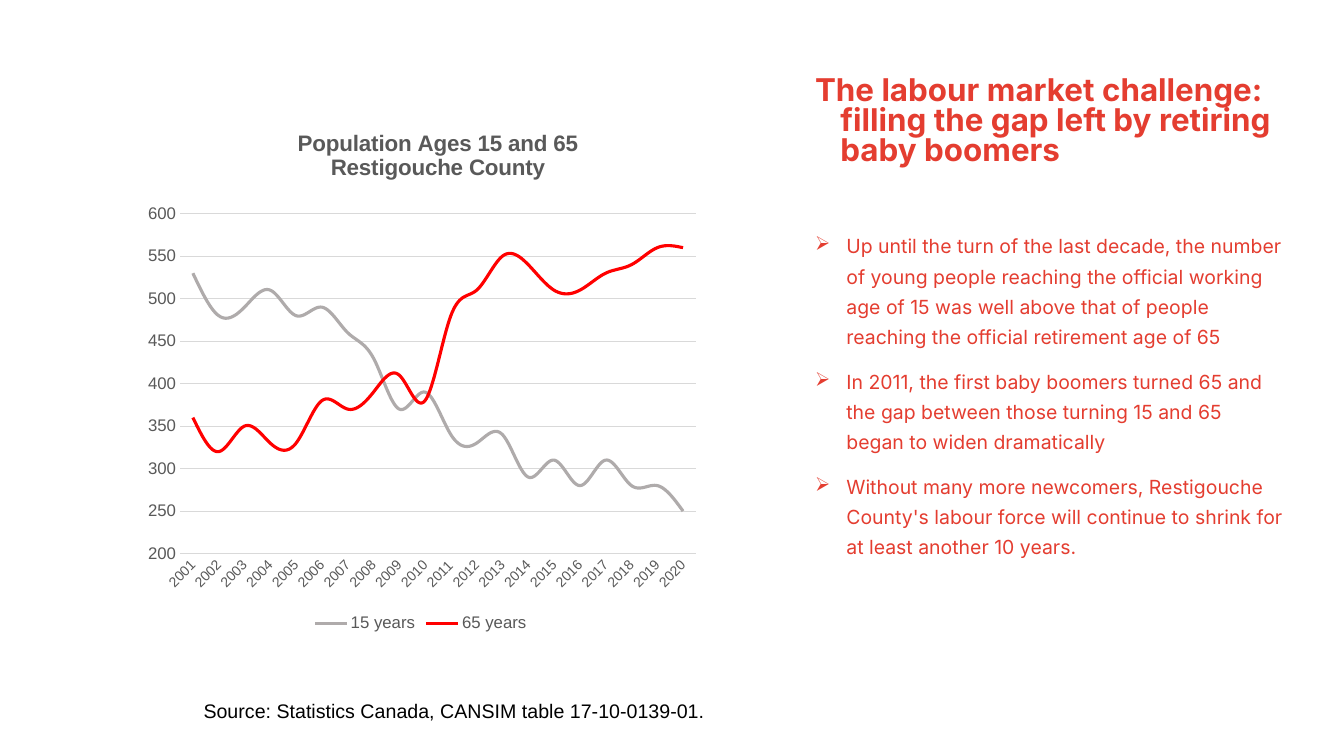
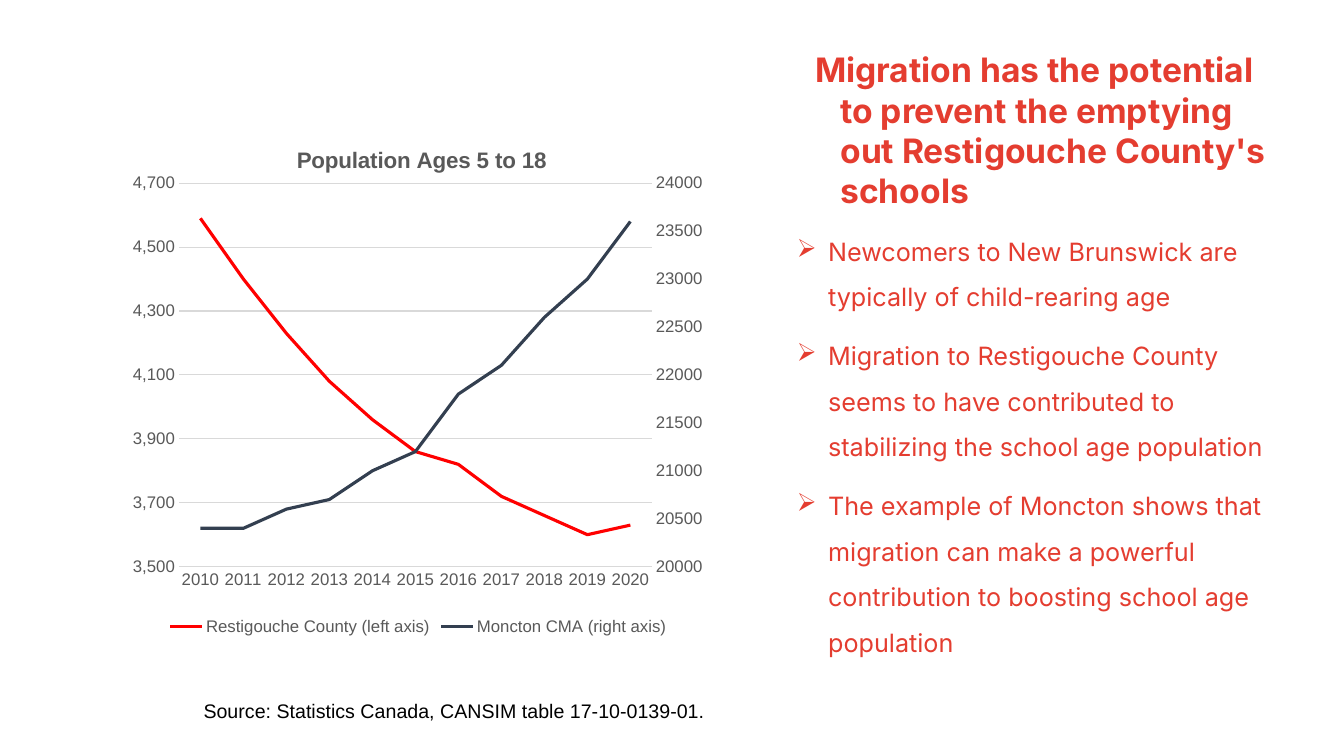
from copy import deepcopy

from pptx import Presentation
from pptx.chart.axis import CategoryAxis, ValueAxis
from pptx.chart.data import CategoryChartData
from pptx.dml.color import RGBColor
from pptx.enum.chart import XL_CHART_TYPE, XL_LEGEND_POSITION, XL_TICK_MARK
from pptx.oxml import parse_xml
from pptx.oxml.ns import nsdecls
from pptx.util import Cm, Pt

# Shared look
CORAL, BLACK, GREY, RULE = "E43D30", "000000", "595959", "D9D9D9"
RED, SILVER, NAVY = "FF0000", "AFABAB", "333F50"
HEAD, PLAIN = "Inter", "Arial"
SOURCE = "Source: Statistics Canada, CANSIM table 17-10-0139-01."


def color(code):
    return RGBColor.from_string(code)


def style(font, size, code, name=PLAIN, bold=False):
    font.size, font.name, font.bold = Pt(size), name, bold
    font.color.rgb = color(code)


def stroke(line, code, width):
    line.color.rgb = color(code)
    line.width = Pt(width)


# Text parts
def indent(para, left, first, mark=None):
    props = para._p.get_or_add_pPr()
    props.set("marL", str(Cm(left)))
    props.set("indent", str(Cm(first)))
    if mark:
        props.append(parse_xml(
            f'<a:buClr {nsdecls("a")}><a:srgbClr val="{CORAL}"/></a:buClr>'))
        props.append(parse_xml(f'<a:buChar {nsdecls("a")} char="{mark}"/>'))


def add_text(slide, box, lines):
    frame = slide.shapes.add_textbox(*map(Cm, box)).text_frame
    frame.word_wrap = True
    frame.text = "\n".join(lines)
    return frame.paragraphs


def add_title(slide, box, text, size, space=1.0):
    para = add_text(slide, box, [text])[0]
    indent(para, 1.27, -0.64)
    para.line_spacing = space
    style(para.font, size, CORAL, HEAD, True)


def add_points(slide, box, lines, size, space):
    for i, para in enumerate(add_text(slide, box, lines)):
        indent(para, 1.42, -0.79, "➢")
        para.line_spacing = space
        if i:
            para.space_before = Pt(10)
        style(para.font, size, CORAL, HEAD)


def add_source(slide):
    para = add_text(slide, (4.88, 17.48, 23.77, 0.86), [SOURCE])[0]
    style(para.font, 14, BLACK)


# Chart parts
def pin(part, spot, inner=False):
    """Place the parent of a chart part at fractions of the chart area."""
    for old in part.getparent().xpath("c:layout"):
        old.getparent().remove(old)
    keys = ["xMode", "yMode"]
    tags = [(key, "edge") for key in keys] + list(zip("xywh", spot))
    if inner:
        tags.insert(0, ("layoutTarget", "inner"))
    body = "".join(f'<c:{tag} val="{val}"/>' for tag, val in tags)
    part.addprevious(parse_xml(
        f'<c:layout {nsdecls("c")}><c:manualLayout>{body}'
        '</c:manualLayout></c:layout>'))


def scale(axis, low, high, step, form="General"):
    axis.minimum_scale, axis.maximum_scale = low, high
    axis.major_unit = step
    labels = axis.tick_labels
    labels.number_format, labels.number_format_is_linked = form, False


def add_chart(slide, box, title, cats, series, smooth=False):
    """Add a line chart; series holds (name, colour, values) rows."""
    data = CategoryChartData()
    data.categories = [str(cat) for cat in cats]
    for name, _, vals in series:
        data.add_series(name, vals)
    chart = slide.shapes.add_chart(
        XL_CHART_TYPE.LINE, *map(Cm, box), data).chart
    style(chart.font, 10, BLACK)
    chart.plots[0].vary_by_categories = False
    for line, (_, code, _) in zip(chart.plots[0].series, series):
        stroke(line.format.line, code, 2.25)
        line.smooth = smooth

    chart.has_title = True
    frame = chart.chart_title.text_frame
    frame.text = title
    for para in frame.paragraphs:
        style(para.font, 16, GREY, bold=True)

    chart.has_legend = True
    chart.legend.position = XL_LEGEND_POSITION.BOTTOM
    chart.legend.include_in_layout = False
    style(chart.legend.font, 12, GREY)

    for axis in (chart.category_axis, chart.value_axis):
        axis.major_tick_mark = axis.minor_tick_mark = XL_TICK_MARK.NONE
        style(axis.tick_labels.font, 12, GREY)
    stroke(chart.category_axis.format.line, RULE, 0.75)
    chart.value_axis.format.line.fill.background()
    chart.value_axis.has_major_gridlines = True
    stroke(chart.value_axis.major_gridlines.format.line, RULE, 0.75)
    return chart


def place(chart, title, plot):
    root = chart._chartSpace
    pin(root.xpath("c:chart/c:title/c:overlay")[0], title)
    pin(root.xpath("c:chart/c:plotArea/c:lineChart")[0], plot, True)


def split(chart):
    """Move the last series to a right-hand axis and return that axis."""
    left = chart._chartSpace.xpath(".//c:lineChart")[0]
    area = left.getparent()
    right = deepcopy(left)
    left.remove(left.xpath("c:ser")[-1])
    for ser in right.xpath("c:ser")[:-1]:
        right.remove(ser)
    left.addnext(right)
    cat, val = (deepcopy(area.xpath(f"c:{tag}")[0])
                for tag in ("catAx", "valAx"))
    area.xpath("c:valAx")[0].addnext(val)
    val.addnext(cat)
    ids = {node.get("val"): str(9001 + i)
           for i, node in enumerate(right.xpath("c:axId"))}
    for part in (right, cat, val):
        for node in part.xpath("c:axId | c:crossAx"):
            node.set("val", ids[node.get("val")])
    val.xpath("c:axPos")[0].set("val", "r")
    val.xpath("c:crosses")[0].set("val", "max")
    CategoryAxis(cat).visible = False
    axis = ValueAxis(val)
    axis.has_major_gridlines = False
    return axis


# Slides
def add_labour(slide):
    chart = add_chart(
        slide, (3.38, 3.05, 14.45, 12.98),
        "Population Ages 15 and 65\nRestigouche County", range(2001, 2021),
        [("15 years", SILVER,
          (530, 480, 490, 510, 480, 490, 460, 430, 370, 390,
           340, 330, 340, 290, 310, 280, 310, 280, 280, 250)),
         ("65 years", RED,
          (360, 320, 350, 330, 330, 380, 370, 390, 410, 380,
           480, 510, 550, 540, 510, 510, 530, 540, 560, 560))], True)
    scale(chart.value_axis, 200, 600, 50)
    chart.category_axis.tick_labels.font.size = Pt(10)
    body = chart._chartSpace.xpath(".//c:catAx/c:txPr/a:bodyPr")[0]
    body.set("rot", "-2700000")
    place(chart, (0.28, 0.01), (0.08, 0.18, 0.9, 0.66))
    add_title(slide, (19.66, 1.83, 12.93, 3.3),
              "The labour market challenge: filling the gap left by "
              "retiring baby boomers", 22.4, 0.8)
    add_points(slide, (19.66, 5.61, 12.93, 11), [
        "Up until the turn of the last decade, the number of young people "
        "reaching the official working age of 15 was well above that of "
        "people reaching the official retirement age of 65",
        "In 2011, the first baby boomers turned 65 and the gap between "
        "those turning 15 and 65 began to widen dramatically",
        "Without many more newcomers, Restigouche County's labour force "
        "will continue to shrink for at least another 10 years."], 13.9, 1.3)


def add_schools(slide):
    chart = add_chart(
        slide, (3, 3.05, 15.09, 13.06),
        "Population Ages 5 to 18", range(2010, 2021),
        [("Restigouche County (left axis)", RED,
          (4590, 4400, 4230, 4080, 3960, 3860,
           3820, 3720, 3660, 3600, 3630)),
         ("Moncton CMA (right axis)", NAVY,
          (20400, 20400, 20600, 20700, 21000, 21200,
           21800, 22100, 22600, 23000, 23600))])
    scale(chart.value_axis, 3500, 4700, 200, "#,##0")
    scale(split(chart), 20000, 24000, 500)
    place(chart, (0.29, 0.04), (0.1, 0.12, 0.79, 0.74))
    add_title(slide, (19.66, 1.12, 12.93, 2.44),
              "Migration has the potential to prevent the emptying out "
              "Restigouche County's schools", 24)
    add_points(slide, (19.2, 5.44, 13.84, 11.66), [
        "Newcomers to New Brunswick are typically of child-rearing age",
        "Migration to Restigouche County seems to have contributed to "
        "stabilizing the school age population",
        "The example of Moncton shows that migration can make a powerful "
        "contribution to boosting school age population"], 18, 1.5)


def main():
    deck = Presentation()
    deck.slide_width, deck.slide_height = Cm(33.87), Cm(19.05)
    for fill in (add_labour, add_schools):
        slide = deck.slides.add_slide(deck.slide_layouts[6])
        fill(slide)
        add_source(slide)
    deck.save("out.pptx")


if __name__ == "__main__":
    main()
